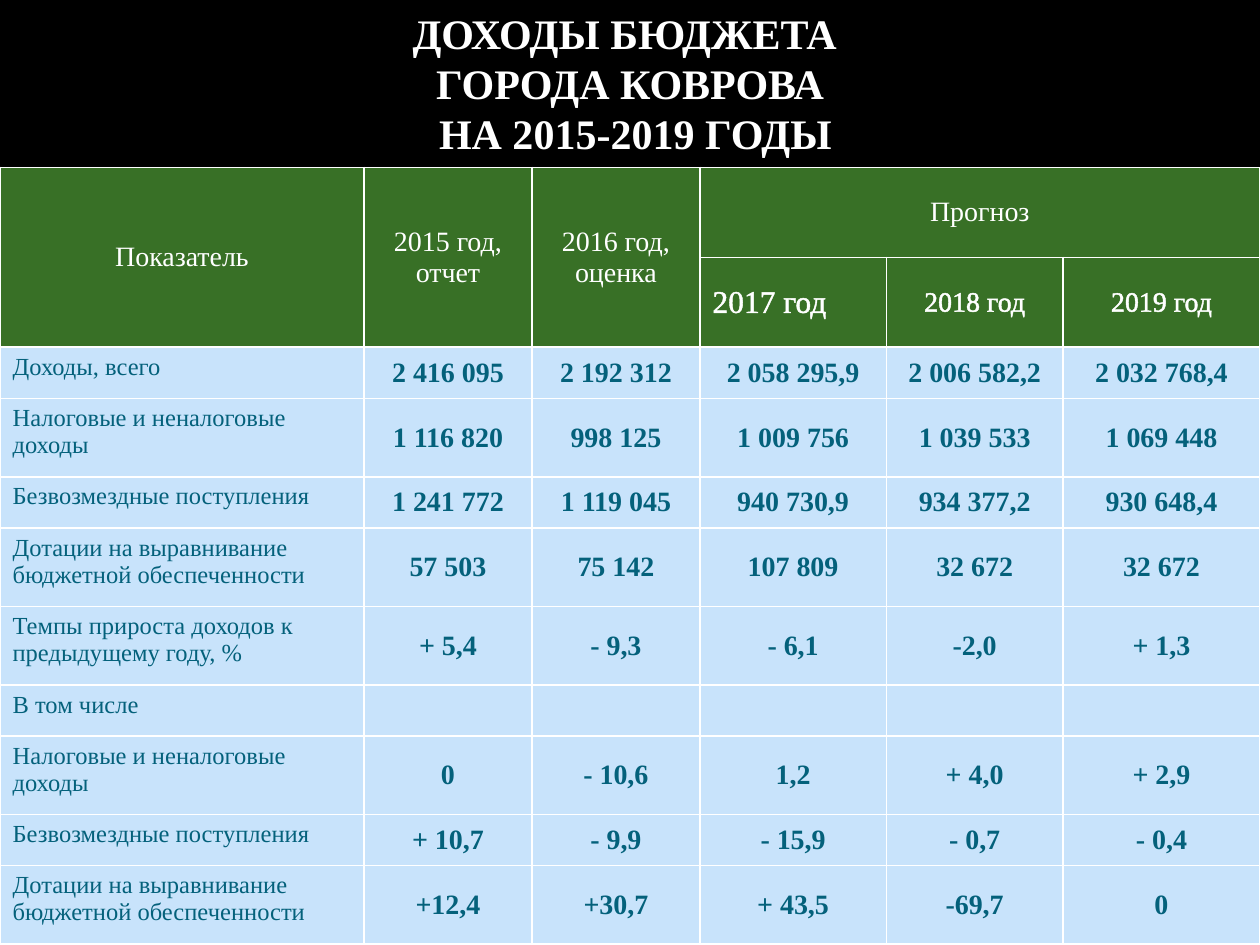
from lxml import etree
from pptx import Presentation
from pptx.dml.color import RGBColor
from pptx.enum import text
from pptx.oxml import ns
from pptx.util import Pt

BLACK = RGBColor(0x00, 0x00, 0x00)
WHITE = RGBColor(0xFF, 0xFF, 0xFF)
GREEN = RGBColor(0x38, 0x70, 0x26)
PALE_BLUE = RGBColor(0xC8, 0xE3, 0xFB)
TEAL = RGBColor(0x04, 0x61, 0x7B)
FONT = "Times New Roman"
CENTER, LEFT = text.PP_ALIGN.CENTER, text.PP_ALIGN.LEFT
MIDDLE, TOP = text.MSO_ANCHOR.MIDDLE, text.MSO_ANCHOR.TOP

HEADING = ["ДОХОДЫ БЮДЖЕТА ", "ГОРОДА КОВРОВА", " НА 2015-2019 ГОДЫ"]
COLUMN_SHARES = [208, 96, 96, 106.5, 101, 112.5]
HEADER_HEIGHT, SHORT_ROW, TALL_ROW = 51.4, 29.2, 44.9
LONG_LABEL = 25
HEADERS = ["Показатель", "2015 год, отчет", "2016 год, оценка"]
FORECAST_YEARS = ["2017 год", "2018 год", "2019 год"]
INDICATORS = [
    ("Доходы, всего",
     ["2 416 095", "2 192 312", "2 058 295,9", "2 006 582,2", "2 032 768,4"]),
    ("Налоговые и неналоговые доходы",
     ["1 116 820", "998 125", "1 009 756", "1 039 533", "1 069 448"]),
    ("Безвозмездные поступления",
     ["1 241 772", "1 119 045", "940 730,9", "934 377,2", "930 648,4"]),
    ("Дотации на выравнивание бюджетной обеспеченности",
     ["57 503", "75 142", "107 809", "32 672", "32 672"]),
    ("Темпы прироста доходов к предыдущему году, %",
     ["+ 5,4", "- 9,3", "- 6,1", "-2,0", "+ 1,3"]),
    ("В том числе", [""] * 5),
    ("Налоговые и неналоговые доходы",
     ["0", "- 10,6", "1,2", "+ 4,0", "+ 2,9"]),
    ("Безвозмездные поступления",
     ["+ 10,7", "- 9,9", "- 15,9", "- 0,7", "- 0,4"]),
    ("Дотации на выравнивание бюджетной обеспеченности",
     ["+12,4", "+30,7", "+ 43,5", "-69,7", "0"]),
]


def add_run(paragraph, words, size, color, bold=False):
    run = paragraph.add_run()
    run.text = words
    font = run.font
    font.name, font.size, font.bold = FONT, Pt(size), bold
    font.color.rgb = color
    return run


def add_line(parent, tag, width, color, position):
    line = etree.Element(ns.qn(tag), w=str(Pt(width)))
    solid = etree.SubElement(line, ns.qn("a:solidFill"))
    etree.SubElement(solid, ns.qn("a:srgbClr"), val=str(color))
    parent.insert(position, line)


def style_cell(cell, fill):
    properties = cell._tc.get_or_add_tcPr()
    for position, side in enumerate("LRTB"):
        add_line(properties, f"a:ln{side}", 1, WHITE, position)
    cell.fill.solid()
    cell.fill.fore_color.rgb = fill


def write_cell(cell, words, size, color, bold=False, align=CENTER, anchor=MIDDLE):
    cell.vertical_anchor = anchor
    paragraph = cell.text_frame.paragraphs[0]
    paragraph.alignment = align
    if words:
        return add_run(paragraph, words, size, color, bold)


def place_heading(slide, left, top, width, height):
    heading = slide.shapes.title
    heading.left, heading.top = Pt(left), Pt(top)
    heading.width, heading.height = Pt(width), Pt(height)
    frame = heading.text_frame
    frame.word_wrap = True
    frame.auto_size = text.MSO_AUTO_SIZE.NONE
    frame.vertical_anchor = MIDDLE
    for index, words in enumerate(HEADING):
        paragraph = frame.add_paragraph() if index else frame.paragraphs[0]
        paragraph.alignment = CENTER
        paragraph.line_spacing = Pt(28.6)
        paragraph.space_before = Pt(0)
        add_run(paragraph, words, 24, WHITE, True)


def fill_header(budget):
    for column, words in enumerate(HEADERS):
        budget.cell(0, column).merge(budget.cell(1, column))
        write_cell(budget.cell(0, column), words, 16, WHITE)
    first = len(HEADERS)
    budget.cell(0, first).merge(budget.cell(0, first + len(FORECAST_YEARS) - 1))
    write_cell(budget.cell(0, first), "Прогноз", 16, WHITE)
    for column, year in enumerate(FORECAST_YEARS, first):
        size, align = (18, LEFT) if column == first else (16, CENTER)
        run = write_cell(budget.cell(1, column), year, size, WHITE, align=align)
        add_line(run.font._element, "a:ln", 1.45, WHITE, 0)


def place_budget(slide, left, top, width):
    row_heights = [HEADER_HEIGHT] * 2 + [
        TALL_ROW if len(label) > LONG_LABEL else SHORT_ROW for label, _ in INDICATORS]
    budget = slide.shapes.add_table(
        len(row_heights), len(COLUMN_SHARES),
        Pt(left), Pt(top), Pt(width), Pt(sum(row_heights))).table
    for column, share in zip(budget.columns, COLUMN_SHARES):
        column.width = Pt(width * share / sum(COLUMN_SHARES))
    for index, (row, height) in enumerate(zip(budget.rows, row_heights)):
        row.height = Pt(height)
        for cell in row.cells:
            style_cell(cell, GREEN if index < 2 else PALE_BLUE)
    fill_header(budget)
    for row, (label, values) in enumerate(INDICATORS, 2):
        write_cell(budget.cell(row, 0), label, 14, TEAL, align=LEFT, anchor=TOP)
        for column, value in enumerate(values, 1):
            write_cell(budget.cell(row, column), value, 16, TEAL, bold=True)


def main():
    deck = Presentation()
    deck.slide_width, deck.slide_height = Pt(720), Pt(540)
    slide = deck.slides.add_slide(deck.slide_layouts[5])
    slide.background.fill.solid()
    slide.background.fill.fore_color.rgb = BLACK
    place_heading(slide, 0, 0, 720, 94.3)
    place_budget(slide, 0, 95.6, 720)
    deck.save("out.pptx")


if __name__ == "__main__":
    main()
